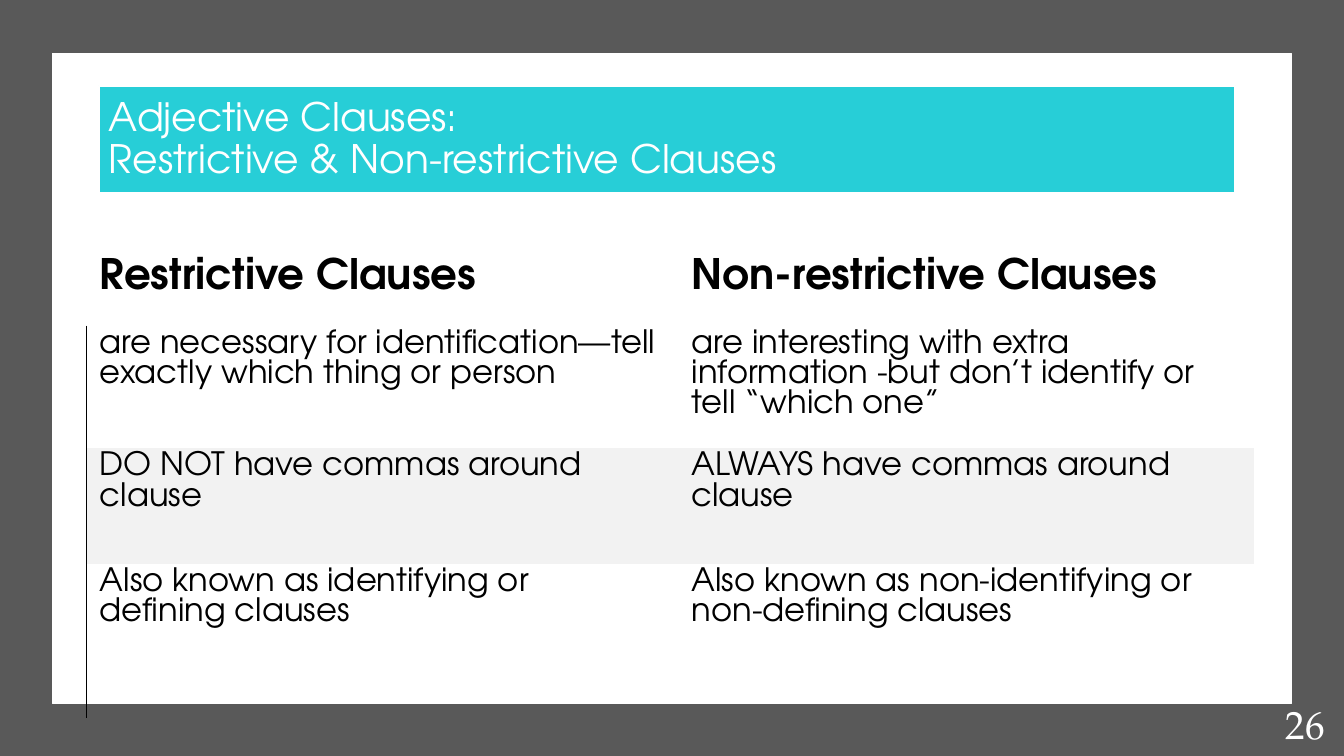
from lxml.etree import SubElement
from pptx import Presentation
from pptx.dml.color import RGBColor
from pptx.enum.shapes import MSO_SHAPE
from pptx.enum.text import MSO_ANCHOR, PP_ALIGN
from pptx.oxml import parse_xml
from pptx.oxml.ns import qn
from pptx.util import Inches, Pt

SANS = "TeX Gyre Adventor"
NO_TABLE_STYLE = "{2D5ABB26-0587-4C30-8999-92F81FD0307C}"
LEFT_RULE = (
    '<a:lnL xmlns:a="http://schemas.openxmlformats.org/drawingml/2006/main" w="9525">'
    '<a:solidFill><a:srgbClr val="000000"/></a:solidFill></a:lnL>'
)


def color(value):
    return RGBColor.from_string(value)


def format_text(paragraph, font_color, font_values, paragraph_values):
    for name, value in font_values.items():
        setattr(paragraph.font, name, value)
    paragraph.font.color.rgb = color(font_color)
    for name, value in paragraph_values.items():
        setattr(paragraph, name, value)


deck = Presentation()
deck.slide_width = Inches(13.33)
deck.slide_height = Inches(7.5)
slide = deck.slides.add_slide(deck.slide_layouts[5])

panels = [
    (0, 0, 13.33, 7.5, "595959", None),
    (0.52, 0.53, 12.29, 6.45, "FFFFFF", "FFFFFF"),
]
for left, top, width, height, fill, outline in panels:
    panel = slide.shapes.add_shape(
        MSO_SHAPE.RECTANGLE, Inches(left), Inches(top), Inches(width), Inches(height)
    )
    panel.shadow.inherit = False
    panel.fill.solid()
    panel.fill.fore_color.rgb = color(fill)
    if outline:
        panel.line.color.rgb = color(outline)
        panel.line.width = Pt(1)
    else:
        panel.line.fill.background()

page_number = slide.shapes.add_textbox(Inches(11.64), Inches(7.16), Inches(1.6), Inches(0.3))
page_number.text_frame.word_wrap = True
page_number.text_frame.vertical_anchor = MSO_ANCHOR.BOTTOM
page_number.text_frame.text = "26"
format_text(
    page_number.text_frame.paragraphs[0],
    "FFFFFF",
    {"name": "TeX Gyre Pagella", "size": Pt(28)},
    {"alignment": PP_ALIGN.RIGHT, "space_after": Pt(6)},
)

title = slide.shapes.title
slide.shapes._spTree.append(title._element)
title_box = {"left": 0.98, "top": 0.85, "width": 11.27, "height": 1.07}
for name, value in title_box.items():
    setattr(title, name, Inches(value))
title.fill.solid()
title.fill.fore_color.rgb = color("27CED7")
title.line.color.rgb = color("FFFFFF")
title.line.width = Pt(1.5)
title.text_frame.vertical_anchor = MSO_ANCHOR.MIDDLE
heading = title.text_frame.paragraphs[0]
heading.add_run().text = "Adjective Clauses:"
heading.add_line_break()
heading.add_run().text = "Restrictive & Non-restrictive Clauses"
format_text(
    heading,
    "FFFFFF",
    {"name": SANS, "size": Pt(28)},
    {"alignment": PP_ALIGN.LEFT, "line_spacing": 0.9},
)

clauses = [
    ("Restrictive Clauses", "Non-restrictive Clauses"),
    (
        "are necessary for identification—tell exactly which thing or person",
        "are interesting with extra information -but don’t identify or tell “which one”",
    ),
    ("DO NOT have commas around clause", "ALWAYS have commas around clause"),
    (
        "Also known as identifying or defining clauses",
        "Also known as non-identifying or non-defining clauses",
    ),
]
column_widths = [5.87, 5.71]
row_heights = [0.9, 1.15, 1.15, 1.53]
cell_layout = {
    "margin_left": Inches(0.13),
    "margin_top": Inches(0.04),
    "margin_right": Inches(0.19),
    "margin_bottom": Inches(0.28),
}
header_font = {"name": SANS, "size": Pt(30), "bold": True}
body_font = {"name": SANS, "size": Pt(23), "bold": False}

comparison = slide.shapes.add_table(
    len(clauses), len(column_widths),
    Inches(0.86), Inches(2.33), Inches(sum(column_widths)), Inches(sum(row_heights)),
).table
comparison.first_row = False
comparison.horz_banding = False
table_properties = comparison._tbl.tblPr
for style in table_properties.findall(qn("a:tableStyleId")):
    table_properties.remove(style)
SubElement(table_properties, qn("a:tableStyleId")).text = NO_TABLE_STYLE

for column, width in zip(comparison.columns, column_widths):
    column.width = Inches(width)
for row_index, (row_texts, height) in enumerate(zip(clauses, row_heights)):
    comparison.rows[row_index].height = Inches(height)
    is_header = row_index == 0
    for column_index, text in enumerate(row_texts):
        cell = comparison.cell(row_index, column_index)
        cell.text = text
        for name, value in cell_layout.items():
            setattr(cell, name, value)
        cell.vertical_anchor = MSO_ANCHOR.BOTTOM if is_header else MSO_ANCHOR.TOP
        format_text(
            cell.text_frame.paragraphs[0],
            "000000",
            header_font if is_header else body_font,
            {"alignment": PP_ALIGN.LEFT},
        )
        if row_index == 2:
            cell.fill.solid()
            cell.fill.fore_color.rgb = color("F2F2F2")
        else:
            cell.fill.background()
        if column_index == 0 and not is_header:
            cell._tc.get_or_add_tcPr().insert(0, parse_xml(LEFT_RULE))

deck.save("out.pptx")
